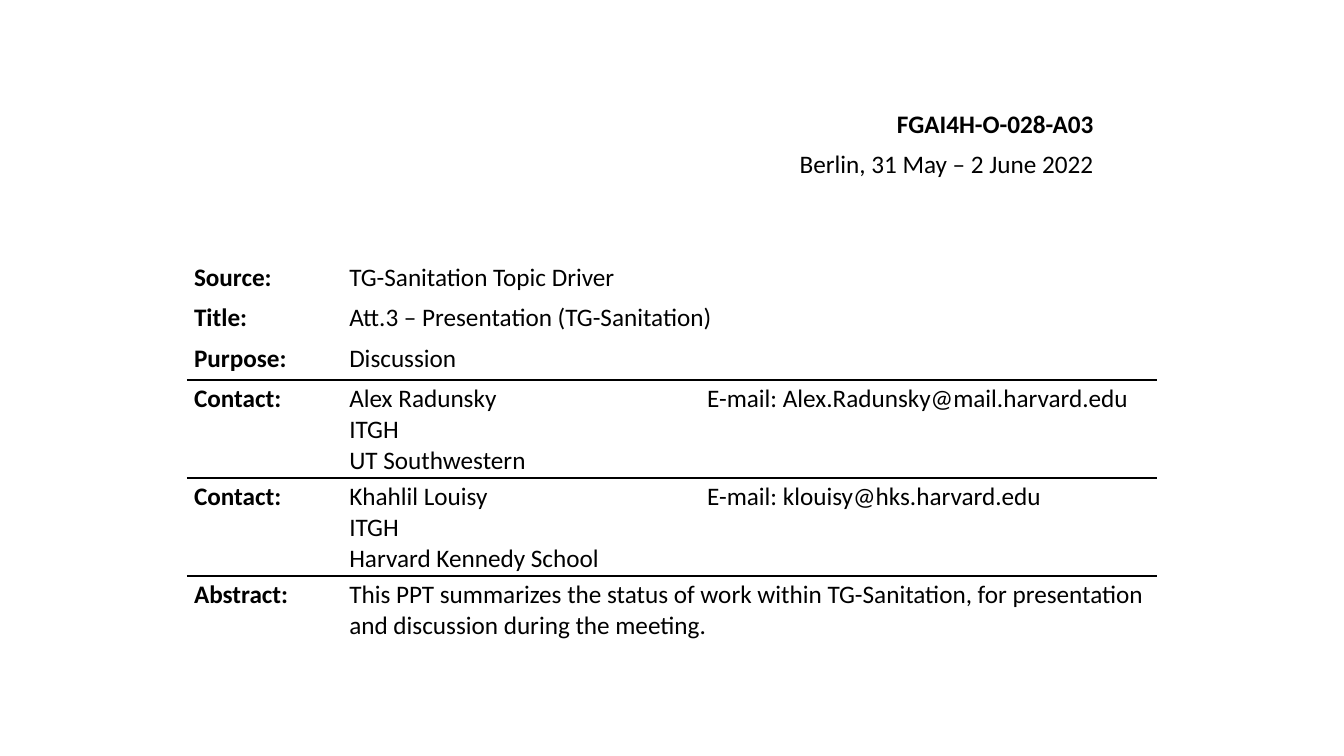
from pptx import Presentation
from pptx.dml.color import RGBColor
from pptx.enum.text import MSO_AUTO_SIZE as AutoSize, PP_ALIGN as Align
from pptx.oxml import parse_xml
from pptx.oxml.ns import nsdecls
from pptx.util import Pt

BLACK = "000000"
BODY = {"name": "Calibri", "size": Pt(18), "bold": False}
LABEL = {**BODY, "bold": True}
CELL = {"margin_left": Pt(5.2), "margin_right": Pt(5.2),
        "margin_top": Pt(2.6), "margin_bottom": Pt(2.6)}
NO_STYLE = "{2D5ABB26-0587-4C30-8999-92F81FD0307C}"

COL_WIDTHS = [110.9, 255.6, 326.6]
# Row height in points, then the texts; two texts mean a merged value
ROWS = [
    (28.9, ["Source:", "TG-Sanitation Topic Driver"]),
    (28.9, ["Title:", "Att.3 – Presentation (TG-Sanitation)"]),
    (28.9, ["Purpose:", "Discussion"]),
    (70, ["Contact:", "Alex Radunsky\nITGH\nUT Southwestern",
          "E-mail: Alex.Radunsky@mail.harvard.edu"]),
    (70, ["Contact:", "Khahlil Louisy\nITGH\nHarvard Kennedy School",
          "E-mail: klouisy@hks.harvard.edu"]),
    (49.1, ["Abstract:", "This PPT summarizes the status of work within "
            "TG-Sanitation, for presentation and discussion during the "
            "meeting."]),
]
RULED_ROWS = {2, 3, 4}  # rows with a line below


def color(hex_code):
    return RGBColor.from_string(hex_code)


def set_attrs(obj, values):
    for name, value in values.items():
        setattr(obj, name, value)


def write(tf, text, font, align=Align.LEFT):
    for i, line in enumerate(text.split("\n")):
        p = tf.add_paragraph() if i else tf.paragraphs[0]
        p.alignment = align
        r = p.add_run()
        r.text = line
        set_attrs(r.font, font)
        r.font.color.rgb = color(BLACK)


def add_heading(s, left, top, width, text, font):
    tf = s.shapes.add_textbox(Pt(left), Pt(top), Pt(width), Pt(29)).text_frame
    set_attrs(tf, {"word_wrap": False, "auto_size": AutoSize.SHAPE_TO_FIT_TEXT})
    write(tf, text, font, Align.RIGHT)


def add_border(cell, side):
    cell._tc.get_or_add_tcPr().insert(0, parse_xml(
        f'<a:{side} {nsdecls("a")} w="{Pt(1.5)}"><a:solidFill>'
        f'<a:srgbClr val="{BLACK}"/></a:solidFill></a:{side}>'))


def add_details(s, left, top):
    width, height = sum(COL_WIDTHS), sum(h for h, _ in ROWS)
    table = s.shapes.add_table(len(ROWS), len(COL_WIDTHS), Pt(left), Pt(top),
                               Pt(width), Pt(height)).table
    set_attrs(table, {"first_row": False, "horz_banding": False})
    table._tbl.tblPr[0].text = NO_STYLE
    for col, w in zip(table.columns, COL_WIDTHS):
        col.width = Pt(w)
    for i, (h, texts) in enumerate(ROWS):
        table.rows[i].height = Pt(h)
        for j in range(len(COL_WIDTHS)):
            cell = table.cell(i, j)
            set_attrs(cell, CELL)
            cell.fill.background()
            # Bottom goes in first, so that top ends up before it
            if i in RULED_ROWS:
                add_border(cell, "lnB")
            if i - 1 in RULED_ROWS:
                add_border(cell, "lnT")
        if len(texts) == 2:
            table.cell(i, 1).merge(table.cell(i, 2))
        for j, text in enumerate(texts):
            write(table.cell(i, j).text_frame, text, BODY if j else LABEL)


def main():
    prs = Presentation()
    set_attrs(prs, {"slide_width": Pt(960), "slide_height": Pt(540)})
    s = prs.slides.add_slide(prs.slide_layouts[6])
    # Document number and meeting
    add_heading(s, 631.2, 73.8, 157, "FGAI4H-O-028-A03", LABEL)
    add_heading(s, 561.2, 102.7, 227, "Berlin, 31 May – 2 June 2022", BODY)
    # Document details
    add_details(s, 133.4, 184.8)
    prs.save("out.pptx")


if __name__ == "__main__":
    main()
